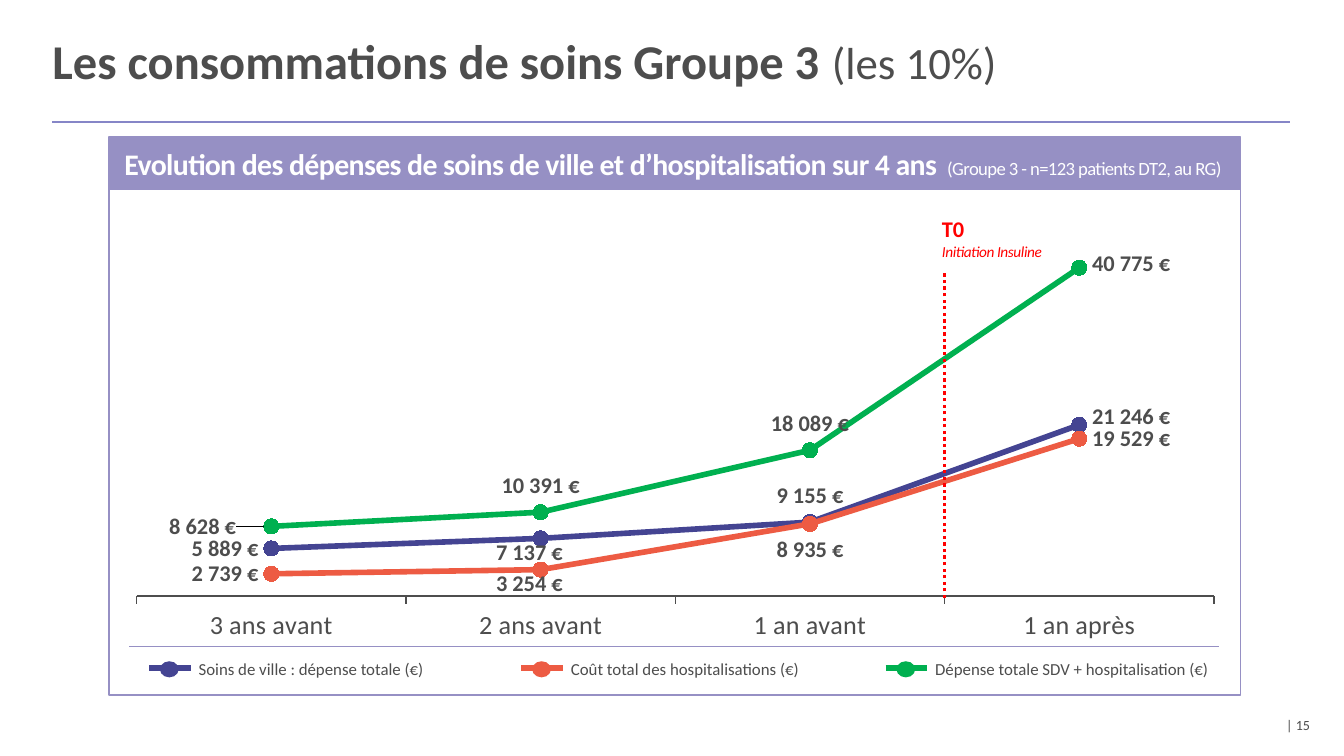
import pptx
import pptx.util
import pptx.dml.color
import pptx.chart.data
import pptx.enum.chart
import pptx.enum.dml
import pptx.enum.shapes
import pptx.enum.text
import pptx.oxml
import pptx.oxml.ns

Pt = pptx.util.Pt
RGB = pptx.dml.color.RGBColor.from_string
ANCHOR = pptx.enum.text.MSO_ANCHOR
ALIGN = pptx.enum.text.PP_ALIGN
SHAPE = pptx.enum.shapes.MSO_SHAPE
SPOT = pptx.enum.chart.XL_LABEL_POSITION
DASH = pptx.enum.dml.MSO_LINE
NS = pptx.oxml.ns.nsdecls("c")

look = {
    "font": "Calibri", "chart": "Arial",
    "ink": RGB("4D4D4D"), "white": RGB("FFFFFF"), "red": RGB("FF0000"),
    "rule": RGB("8686C7"), "band": RGB("9690C4"),
    "town": RGB("444492"), "ward": RGB("ED5B43"), "total": RGB("00B050"),
    "title": 26, "group": 24, "head": 16, "note": 10, "axis": 14,
    "label": 12, "key": 9, "start": 8.2, "page": 7.5,
}
flush = {"margin_left": 0, "margin_right": 0, "margin_top": 0, "margin_bottom": 0}

deck = pptx.Presentation()
deck.slide_width = pptx.util.Inches(10)
deck.slide_height = deck.slide_width * 9 // 16
COL, ROW = deck.slide_width / 100, deck.slide_height / 56.25
slide = deck.slides.add_slide(deck.slide_layouts[5])
shapes = slide.shapes


def grid(x, y, w, h):
    return round(x * COL), round(y * ROW), round(w * COL), round(h * ROW)


def say(shape, runs, frame, para):
    for name, value in {"word_wrap": True, **frame}.items():
        setattr(shape.text_frame, name, value)
    line = shape.text_frame.paragraphs[0]
    for name, value in para.items():
        setattr(line, name, value)
    for text, size, tint, bold, slant, space in runs:
        if line.runs and slant:
            line.add_line_break()
        run = line.add_run()
        run.text = text
        style = {"name": look["font"], "size": Pt(look[size]), "bold": bold, "italic": slant}
        for name, value in style.items():
            setattr(run.font, name, value)
        run.font.color.rgb = look[tint]
        if space:
            run.font._element.set("spc", str(space))


title = shapes.title
title.left, title.top, title.width, title.height = grid(3.9, 1.3, 93.6, 6.9)
say(title, [("Les consommations de soins Groupe 3 ", "title", "ink", True, False, 0),
            ("(les 10%)", "group", "ink", False, False, 0)],
    {**flush, "vertical_anchor": ANCHOR.MIDDLE, "auto_size": pptx.enum.text.MSO_AUTO_SIZE.NONE},
    {"alignment": ALIGN.LEFT, "line_spacing": 0.9})

for place, fill, width in [((8.1, 11.5, 84.2, 40.2), "white", 1),
                           ((8.1, 10.2, 84.2, 3.9), "band", 0.75)]:
    panel = shapes.add_shape(SHAPE.RECTANGLE, *grid(*place))
    panel.shadow.inherit = False
    panel.fill.solid()
    panel.fill.fore_color.rgb = look[fill]
    panel.line.color.rgb = look["band"]
    panel.line.width = Pt(width)
say(panel, [("Evolution des dépenses de soins de ville et d’hospitalisation sur 4 ans ",
             "head", "white", True, False, -30),
            (" (Groupe 3 - n=123 patients DT2, au RG) ", "note", "white", False, False, -30)],
    {**flush, "vertical_anchor": ANCHOR.MIDDLE}, {"alignment": ALIGN.CENTER})

money = r'#\ ##0\ "€"'
data = pptx.chart.data.CategoryChartData(number_format=money)
data.categories = ["3 ans avant", "2 ans avant", "1 an avant", "1 an après"]
L, T, R, B = SPOT.LEFT, SPOT.ABOVE, SPOT.RIGHT, SPOT.BELOW
lines = [
    ("Soins de ville : dépense totale (€)", "town", 11.1, (5889, 7137, 9155, 21246),
     [(L, 0, 0), (B, -0.01, -0.03), (T, 0, 0), (R, 0, -0.02)]),
    ("Coût total des hospitalisations (€)", "ward", 38.8, (2739, 3254, 8935, 19529),
     [(L, 0, 0), (B, -0.01, -0.03), (B, 0, 0), (R, 0, 0)]),
    ("Dépense totale SDV + hospitalisation (€)", "total", 65.9, (8628, 10391, 18089, 40775),
     [(L, -0.02, 0), (T, 0, 0), (T, 0, 0), (R, 0, -0.01)]),
]
for rank, (name, tint, left, costs, spots) in enumerate(lines, 1):
    data.add_series(f"Series {rank}", costs)
chart = shapes.add_chart(pptx.enum.chart.XL_CHART_TYPE.LINE_MARKERS,
                         *grid(8.5, 18.6, 83.5, 29.6), data).chart
chart.has_legend = chart.has_title = False
chart.font.name, chart.font.size = look["chart"], Pt(look["note"])
chart.font.color.rgb = look["town"]
area = chart._chartSpace.chart.plotArea
for old in area.findall(pptx.oxml.ns.qn("c:layout")):
    area.remove(old)
area.insert(0, pptx.oxml.parse_xml(
    f'<c:layout {NS}><c:manualLayout><c:layoutTarget val="inner"/>'
    '<c:xMode val="edge"/><c:yMode val="edge"/><c:x val="0.02"/><c:y val="0.02"/>'
    '<c:w val="0.96"/><c:h val="0.85"/></c:manualLayout></c:layout>'))
scale = {"visible": False, "minimum_scale": 0, "maximum_scale": 42000,
         "has_major_gridlines": False}
for name, value in scale.items():
    setattr(chart.value_axis, name, value)
ticks = chart.value_axis.tick_labels
ticks.number_format, ticks.number_format_is_linked = money, False
axis = chart.category_axis
axis.major_tick_mark = pptx.enum.chart.XL_TICK_MARK.OUTSIDE
axis.format.line.color.rgb = look["ink"]
axis.format.line.width = Pt(0.75)
axis.tick_labels.font.name = look["font"]
axis.tick_labels.font.size = Pt(look["axis"])
axis.tick_labels.font.color.rgb = look["ink"]

plot = chart.plots[0]
plot.vary_by_categories = False
for curve, (name, tint, left, costs, spots) in zip(plot.series, lines):
    curve.smooth = False
    curve.format.line.color.rgb = look[tint]
    curve.format.line.width = Pt(3)
    curve.marker.style = pptx.enum.chart.XL_MARKER_STYLE.CIRCLE
    curve.marker.size = 8
    curve.marker.format.fill.solid()
    curve.marker.format.fill.fore_color.rgb = look[tint]
    curve.marker.format.line.color.rgb = look[tint]
    tags = curve.data_labels
    tags.show_value, tags.position = True, T
    tags.number_format, tags.number_format_is_linked = money, False
    points = [curve.points[i].data_label for i in range(len(spots))]
    for tag, (spot, dx, dy) in zip(points, spots):
        tag.position = spot
        if dx or dy:
            tag._dLbl.insert(1, pptx.oxml.parse_xml(
                f'<c:layout {NS}><c:manualLayout><c:x val="{dx}"/><c:y val="{dy}"/>'
                '</c:manualLayout></c:layout>'))
    for tag in [tags, *points]:
        tag.font.name, tag.font.size, tag.font.bold = look["font"], Pt(look["label"]), True
        tag.font.color.rgb = look["ink"]
    tags._element.append(pptx.oxml.parse_xml(
        f'<c:extLst {NS}><c:ext uri="{{CE6537A1-D6FC-4f65-9D91-7224C49458BB}}" '
        'xmlns:c15="http://schemas.microsoft.com/office/drawing/2012/chart">'
        '<c15:showLeaderLines val="0"/></c:ext></c:extLst>'))

rules = [(3.9, 9.1, 96, 9.1, "rule", 1, None),
         (9.6, 48.1, 90.7, 48.1, "band", 0.75, None),
         (70.3, 44.5, 70.3, 20.2, "red", 1.75, DASH.ROUND_DOT)]
rules += [(left, 49.7, left + 3.1, 49.7, tint, 3, None) for name, tint, left, *rest in lines]
for x, y, far, low, tint, width, dash in rules:
    rule = shapes.add_connector(pptx.enum.shapes.MSO_CONNECTOR.STRAIGHT, *grid(x, y, far, low))
    rule.line.color.rgb = look[tint]
    rule.line.width = Pt(width)
    if dash:
        rule.line.dash_style = dash
    rule._element.spPr.append(pptx.oxml.parse_xml(
        f'<a:effectLst {pptx.oxml.ns.nsdecls("a")}/>'))

for name, tint, left, *rest in lines:
    dot = shapes.add_shape(SHAPE.OVAL, *grid(left + 0.8, 49.2, 1.4, 1.2))
    dot.shadow.inherit = False
    dot.fill.solid()
    dot.fill.fore_color.rgb = look[tint]
    dot.line.fill.background()
    key = shapes.add_textbox(*grid(left + 2.7, 48.6, len(name) * 0.56, 2.5))
    say(key, [(name, "key", "ink", False, False, 0)],
        {"word_wrap": False}, {"line_spacing": Pt(10.5)})

start = shapes.add_textbox(*grid(69.1, 15.5, 12.1, 4.4))
say(start, [("T0", "label", "red", True, False, 0),
            ("Initiation Insuline", "start", "red", False, True, -20)], {}, {})
page = shapes.add_textbox(*grid(95.7, 53.3, 5.3, 1.9))
say(page, [("| 15", "page", "ink", False, False, 0)], flush, {})

deck.save("out.pptx")
